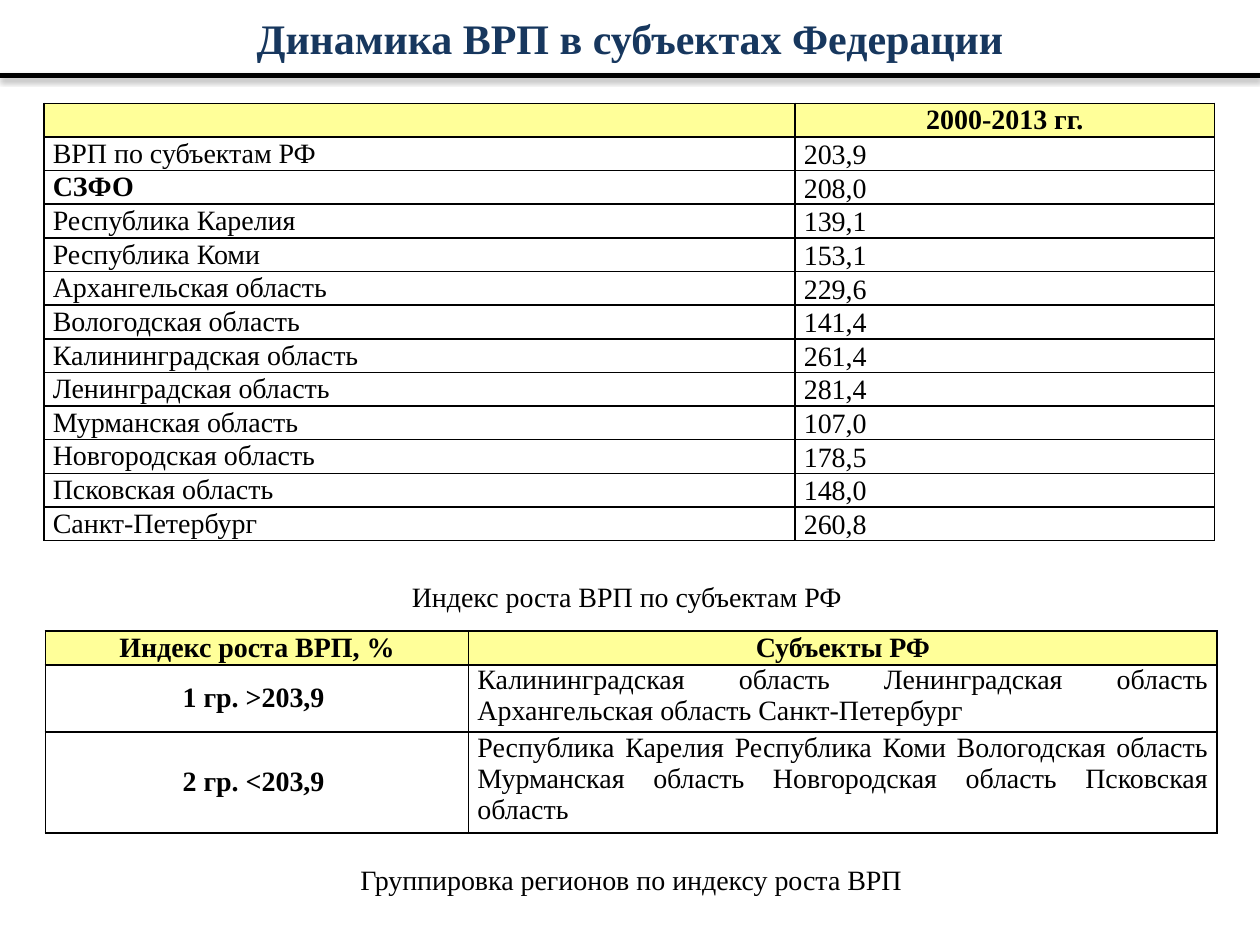
import pptx
import pptx.dml.color
import pptx.enum.shapes
import pptx.enum.text
import pptx.oxml
import pptx.oxml.ns
import pptx.util
from pptx.util import Inches

COLORS = {"title": "17375E", "text": "000000", "line": "000000",
          "header": "FFFF99", "white": "FFFFFF"}
FONT = "Times New Roman"
ALIGN = pptx.enum.text.PP_ALIGN
ANCHOR = pptx.enum.text.MSO_ANCHOR
NAMESPACE = pptx.oxml.ns.nsdecls("a")

REGIONS = [
    ("ВРП по субъектам РФ", "203,9"),
    ("СЗФО", "208,0"),
    ("Республика Карелия", "139,1"),
    ("Республика Коми", "153,1"),
    ("Архангельская область", "229,6"),
    ("Вологодская область", "141,4"),
    ("Калининградская область", "261,4"),
    ("Ленинградская область", "281,4"),
    ("Мурманская область", "107,0"),
    ("Новгородская область", "178,5"),
    ("Псковская область", "148,0"),
    ("Санкт-Петербург", "260,8"),
]
GROUPS = [
    ("1 гр. >203,9 ", "Калининградская область Ленинградская область "
                      "Архангельская область Санкт-Петербург"),
    ("2 гр. <203,9 ", "Республика Карелия Республика Коми Вологодская область "
                      "Мурманская область Новгородская область Псковская область"),
]


def color(name):
    return pptx.dml.color.RGBColor.from_string(COLORS[name])


def write(text_frame, text, alignment=ALIGN.CENTER, size=16, bold=False, tone="text"):
    paragraph = text_frame.paragraphs[0]
    paragraph.alignment = alignment
    if not text:
        paragraph._p.append(pptx.oxml.parse_xml(
            f'<a:endParaRPr {NAMESPACE} sz="{size * 100}"/>'))
        return
    run = paragraph.add_run()
    run.text = text
    run.font.name = FONT
    run.font.size = pptx.util.Pt(size)
    run.font.bold = bold
    run.font.color.rgb = color(tone)


def add_title(slide, text):
    shape = slide.shapes.add_textbox(Inches(0.02), Inches(-0.08), Inches(9.96), Inches(0.76))
    shape.text_frame.word_wrap = True
    shape.text_frame.vertical_anchor = ANCHOR.MIDDLE
    write(shape.text_frame, text, size=24, bold=True, tone="title")


def add_rule(slide, top):
    connector = slide.shapes.add_connector(
        pptx.enum.shapes.MSO_CONNECTOR.STRAIGHT, 0, Inches(top), Inches(10), Inches(top))
    connector.line.color.rgb = color("line")
    connector.line.width = pptx.util.Pt(3)
    connector._element.spPr.append(pptx.oxml.parse_xml(
        f'<a:effectLst {NAMESPACE}><a:outerShdw blurRad="40000" dist="23000" dir="5400000" '
        f'rotWithShape="0"><a:srgbClr val="{COLORS["line"]}"><a:alpha val="35000"/>'
        '</a:srgbClr></a:outerShdw></a:effectLst>'))


def add_caption(slide, left, top, width, text):
    shape = slide.shapes.add_shape(
        pptx.enum.shapes.MSO_SHAPE.RECTANGLE,
        Inches(left), Inches(top), Inches(width), Inches(0.39))
    shape.shadow.inherit = False
    shape.fill.solid()
    shape.fill.fore_color.rgb = color("white")
    shape.line.color.rgb = color("white")
    shape.line.width = pptx.util.Pt(2)
    shape.text_frame.word_wrap = True
    shape.text_frame.vertical_anchor = ANCHOR.MIDDLE
    write(shape.text_frame, text)


def add_borders(cell):
    properties = cell._tc.get_or_add_tcPr()
    for side in ("lnL", "lnR", "lnT", "lnB"):
        properties.append(pptx.oxml.parse_xml(
            f'<a:{side} {NAMESPACE} w="12700"><a:solidFill>'
            f'<a:srgbClr val="{COLORS["line"]}"/></a:solidFill></a:{side}>'))


def fill_cell(cell, text, alignment, anchor, bold, header):
    cell.margin_left = cell.margin_right = Inches(0.07)
    cell.margin_top = cell.margin_bottom = 0
    cell.vertical_anchor = anchor
    add_borders(cell)
    if header:
        cell.fill.solid()
        cell.fill.fore_color.rgb = color("header")
    else:
        cell.fill.background()
    write(cell.text_frame, text, alignment, bold=bold)


def add_grid(slide, left, top, widths, heights, rows, alignments, anchors, bold_labels):
    table = slide.shapes.add_table(
        len(rows), len(widths), Inches(left), Inches(top),
        Inches(sum(widths)), Inches(sum(heights))).table
    table.first_row = False
    table.horz_banding = False
    for column, width in zip(table.columns, widths):
        column.width = Inches(width)
    for row_index, (height, texts) in enumerate(zip(heights, rows)):
        table.rows[row_index].height = Inches(height)
        header = row_index == 0
        for column_index, text in enumerate(texts):
            fill_cell(
                table.cell(row_index, column_index), text,
                ALIGN.CENTER if header else alignments[column_index],
                ANCHOR.MIDDLE if header else anchors[column_index],
                header or text in bold_labels, header)


def main():
    presentation = pptx.Presentation()
    presentation.slide_width = Inches(10)
    presentation.slide_height = Inches(7.5)
    slide = presentation.slides.add_slide(presentation.slide_layouts[6])

    add_title(slide, "Динамика ВРП в субъектах Федерации")
    region_rows = [("", "2000-2013 гг.")] + REGIONS
    add_grid(slide, 0.35, 0.82, [5.96, 3.33], [0.24] * len(region_rows), region_rows,
             [ALIGN.JUSTIFY, ALIGN.JUSTIFY], [ANCHOR.MIDDLE, ANCHOR.BOTTOM], ["СЗФО"])
    add_rule(slide, 0.6)
    add_caption(slide, 2.81, 4.54, 4.33, "Индекс роста ВРП по субъектам РФ")
    group_rows = [("Индекс роста ВРП, %", "Субъекты РФ")] + GROUPS
    add_grid(slide, 0.36, 5.01, [3.36, 5.94], [0.24, 0.48, 0.72], group_rows,
             [ALIGN.CENTER, ALIGN.JUSTIFY], [ANCHOR.MIDDLE, ANCHOR.TOP],
             [label for label, _ in GROUPS])
    add_caption(slide, 2.69, 6.78, 4.64, "Группировка регионов по индексу роста ВРП")
    presentation.save("out.pptx")


if __name__ == "__main__":
    main()
